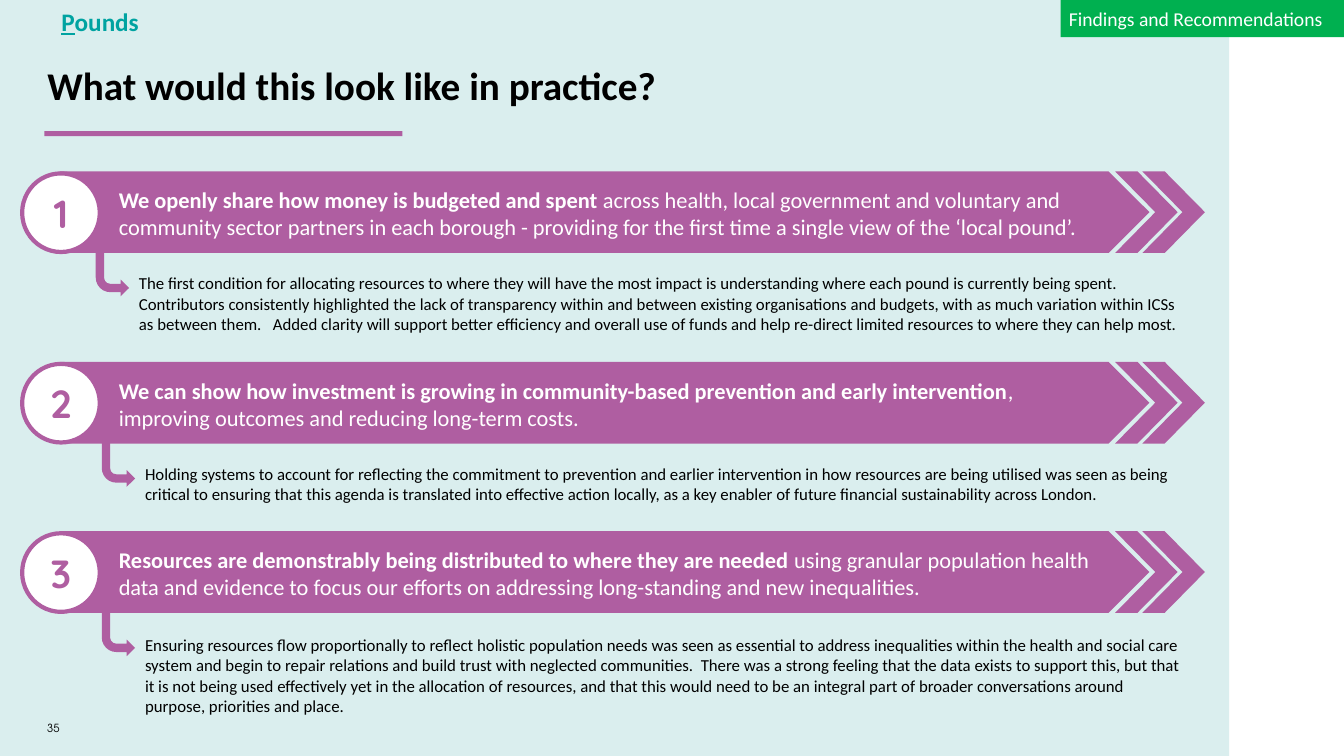
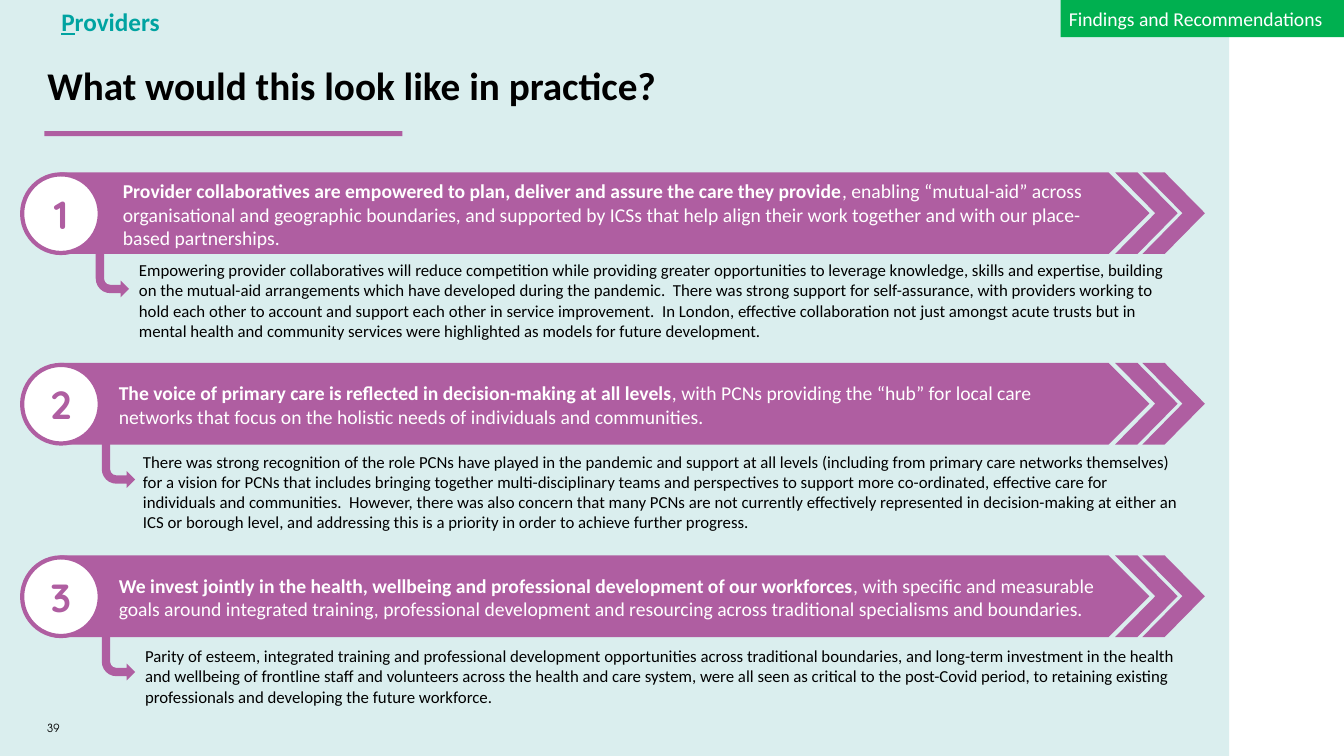
from dataclasses import dataclass

from pptx import Presentation
from pptx.dml.color import RGBColor
from pptx.enum.shapes import MSO_SHAPE
from pptx.enum.text import MSO_ANCHOR, MSO_AUTO_SIZE, PP_ALIGN
from pptx.util import Inches, Pt

COLORS = {
    "panel": "DAEEEE",
    "purple": "AF5EA1",
    "teal": "00A3A1",
    "green": "00B050",
    "white": "FFFFFF",
    "black": "000000",
}
BODY_FONT = "Calibri"
BADGE_FONT = "Quicksand"
NUMBER_FONT = "TeX Gyre Adventor"
TITLE = "What would this look like in practice?"
SECTION = "Findings and Recommendations"

BAND_LEFT, BAND_WIDTH, BAND_HEIGHT = 0.59, 10.81, 0.81


@dataclass
class Step:
    top: float
    lead: str
    rest: str
    note: str
    note_top: float
    note_left: float = 1.34
    arrow_left: float = 1.01
    headline_left: float = 1.08


@dataclass
class Theme:
    name: str
    number: str
    headline_size: int
    steps: list


THEMES = [
    Theme("Pounds", "35", 16, [
        Step(1.7, "We openly share how money is budgeted and spent ",
             "across health, local government and voluntary and community sector partners "
             "in each borough - providing for the first time a single view of the "
             "‘local pound’.",
             "The first condition for allocating resources to where they will have the most "
             "impact is understanding where each pound is currently being spent. "
             "Contributors consistently highlighted the lack of transparency within and "
             "between existing organisations and budgets, with as much variation within "
             "ICSs as between them.   Added clarity will support better efficiency and "
             "overall use of funds and help re-direct limited resources to where they can "
             "help most.",
             2.66, note_left=1.28, arrow_left=0.95),
        Step(3.59, "We can show how investment is growing in community-based prevention "
             "and early intervention",
             ", improving outcomes and reducing long-term costs.",
             "Holding systems to account for reflecting the commitment to prevention and "
             "earlier intervention in how resources are being utilised was seen as being "
             "critical to ensuring that this agenda is translated into effective action "
             "locally, as a key enabler of future financial sustainability across London.",
             4.55),
        Step(5.27, "Resources are demonstrably being distributed to where they are needed",
             " using granular population health data and evidence to focus our efforts on "
             "addressing long-standing and new inequalities.",
             "Ensuring resources flow proportionally to reflect holistic population needs "
             "was seen as essential to address inequalities within the health and social "
             "care system and begin to repair relations and build trust with neglected "
             "communities.  There was a strong feeling that the data exists to support "
             "this, but that it is not being used effectively yet in the allocation of "
             "resources, and that this would need to be an integral part of broader "
             "conversations around purpose, priorities and place.",
             6.25),
    ]),
    Theme("Providers", "39", 14, [
        Step(1.71, "Provider collaboratives are empowered to plan, deliver and assure the "
             "care they provide",
             ", enabling “mutual-aid” across organisational and geographic boundaries, and "
             "supported by ICSs that help align their work together and with our "
             "place-based partnerships.",
             "Empowering provider collaboratives will reduce competition while providing "
             "greater opportunities to leverage knowledge, skills and expertise, building "
             "on the mutual-aid arrangements which have developed during the pandemic.  "
             "There was strong support for self-assurance, with providers working to hold "
             "each other to account and support each other in service improvement.  In "
             "London, effective collaboration not just amongst acute trusts but in mental "
             "health and community services were highlighted as models for future "
             "development.",
             2.53, note_left=1.28, arrow_left=0.95, headline_left=1.12),
        Step(3.6, "The voice of primary care is reflected in decision-making at all levels",
             ", with PCNs providing the “hub” for local care networks that focus on the "
             "holistic needs of individuals and communities.",
             "There was strong recognition of the role PCNs have played in the pandemic and "
             "support at all levels (including from primary care networks themselves) for a "
             "vision for PCNs that includes bringing together multi-disciplinary teams and "
             "perspectives to support more co-ordinated, effective care for individuals and "
             "communities.  However, there was also concern that many PCNs are not "
             "currently effectively represented in decision-making at either an ICS or "
             "borough level, and addressing this is a priority in order to achieve further "
             "progress.",
             4.43, note_left=1.32),
        Step(5.51, "We invest jointly in the health, wellbeing and professional development "
             "of our workforces",
             ", with specific and measurable goals around integrated training, professional "
             "development and resourcing across traditional specialisms and boundaries.",
             "Parity of esteem, integrated training and professional development "
             "opportunities across traditional boundaries, and long-term investment in the "
             "health and wellbeing of frontline staff and volunteers across the health and "
             "care system, were all seen as critical to the post-Covid period, to retaining "
             "existing professionals and developing the future workforce.",
             6.36),
    ]),
]


def color(name):
    return RGBColor.from_string(COLORS[name])


def set_font(font, size, color_name, bold=False, name=BODY_FONT):
    font.name = name
    font.size = Pt(size)
    font.bold = bold
    font.color.rgb = color(color_name)


def add_block(page, kind, left, top, width, height, fill="purple"):
    block = page.shapes.add_shape(
        kind, Inches(left), Inches(top), Inches(width), Inches(height))
    block.shadow.inherit = False
    block.fill.solid()
    block.fill.fore_color.rgb = color(fill)
    block.line.fill.background()
    return block


def add_text(page, left, top, width, height, anchor=MSO_ANCHOR.TOP):
    """Add an empty wrapping text box and return its first paragraph."""
    box = page.shapes.add_textbox(
        Inches(left), Inches(top), Inches(width), Inches(height))
    box.text_frame.word_wrap = True
    box.text_frame.vertical_anchor = anchor
    return box.text_frame.paragraphs[0]


def add_span(para, text):
    span = para.add_run()
    span.text = text
    return span


def add_title(page):
    title = page.shapes.title
    title.left, title.top = Inches(0.37), Inches(0.47)
    title.width, title.height = Inches(11.57), Inches(0.81)
    frame = title.text_frame
    frame.text = TITLE
    frame.auto_size = MSO_AUTO_SIZE.NONE
    frame.vertical_anchor = MSO_ANCHOR.MIDDLE
    para = frame.paragraphs[0]
    para.alignment = PP_ALIGN.LEFT
    para.line_spacing = 0.9
    set_font(para.font, 28, "black", bold=True)


def add_frame(page, theme):
    # Background panel, kept behind the title
    panel = add_block(page, MSO_SHAPE.RECTANGLE, 0, 0, 12.19, 7.5, "panel")
    page.shapes.title.element.addprevious(panel.element)
    add_title(page)
    add_block(page, MSO_SHAPE.RECTANGLE, 0.44, 1.3, 3.55, 0.05)

    # Theme name with its initial underlined
    para = add_text(page, 0.51, 0.01, 6.67, 0.4)
    set_font(para.font, 18, "teal", bold=True)
    add_span(para, theme.name[0]).font.underline = True
    add_span(para, theme.name[1:])

    # Section tag
    tag = add_block(page, MSO_SHAPE.RECTANGLE, 10.52, 0, 2.82, 0.37, "green")
    frame = tag.text_frame
    frame.margin_left = frame.margin_right = Inches(0.08)
    frame.vertical_anchor = MSO_ANCHOR.MIDDLE
    frame.text = SECTION
    frame.paragraphs[0].alignment = PP_ALIGN.LEFT
    set_font(frame.paragraphs[0].font, 14, "white")

    # Page number
    para = add_text(page, 0.37, 7.13, 0.51, 0.19, MSO_ANCHOR.MIDDLE)
    add_span(para, theme.number)
    set_font(para.font, 8, "black", name=NUMBER_FONT)


def add_badge(page, left, top, number):
    badge = add_block(page, MSO_SHAPE.OVAL, left, top, 0.77, 0.78, "white")
    badge.line.color.rgb = color("purple")
    badge.line.width = Pt(3)
    frame = badge.text_frame
    frame.word_wrap = False
    frame.margin_left = frame.margin_right = frame.margin_top = frame.margin_bottom = 0
    frame.vertical_anchor = MSO_ANCHOR.MIDDLE
    frame.text = str(number)
    frame.paragraphs[0].alignment = PP_ALIGN.CENTER
    set_font(frame.paragraphs[0].font, 28, "purple", bold=True, name=BADGE_FONT)


def add_step(page, step, number, headline_size):
    # Banner: pentagon followed by two chevrons
    add_block(page, MSO_SHAPE.PENTAGON, BAND_LEFT, step.top, BAND_WIDTH, BAND_HEIGHT)
    for left in (11.06, 11.33):
        chevron = add_block(page, MSO_SHAPE.CHEVRON, left, step.top, 0.62, BAND_HEIGHT)
        chevron.adjustments[0] = 0.643
    add_badge(page, 0.22, step.top + 0.02, number)

    # Headline
    para = add_text(page, step.headline_left, step.top + 0.01, 9.97, BAND_HEIGHT,
                    MSO_ANCHOR.MIDDLE)
    for text, bold in ((step.lead, True), (step.rest, False)):
        set_font(add_span(para, text).font, headline_size, "white", bold)

    # Arrow leading to the note
    arrow = add_block(page, MSO_SHAPE.BENT_ARROW, step.arrow_left, step.top + 0.77,
                      0.33, 0.47)
    arrow.element.spPr.xfrm.set("flipV", "1")
    para = add_text(page, step.note_left, step.note_top, 10.53, 0.71)
    add_span(para, step.note)
    set_font(para.font, 12, "black")


def add_theme_page(deck, theme):
    page = deck.slides.add_slide(deck.slide_layouts[5])
    add_frame(page, theme)
    for number, step in enumerate(theme.steps, 1):
        add_step(page, step, number, theme.headline_size)


def main():
    deck = Presentation()
    deck.slide_width, deck.slide_height = Inches(13.33), Inches(7.5)
    for theme in THEMES:
        add_theme_page(deck, theme)
    deck.save("out.pptx")


if __name__ == "__main__":
    main()
